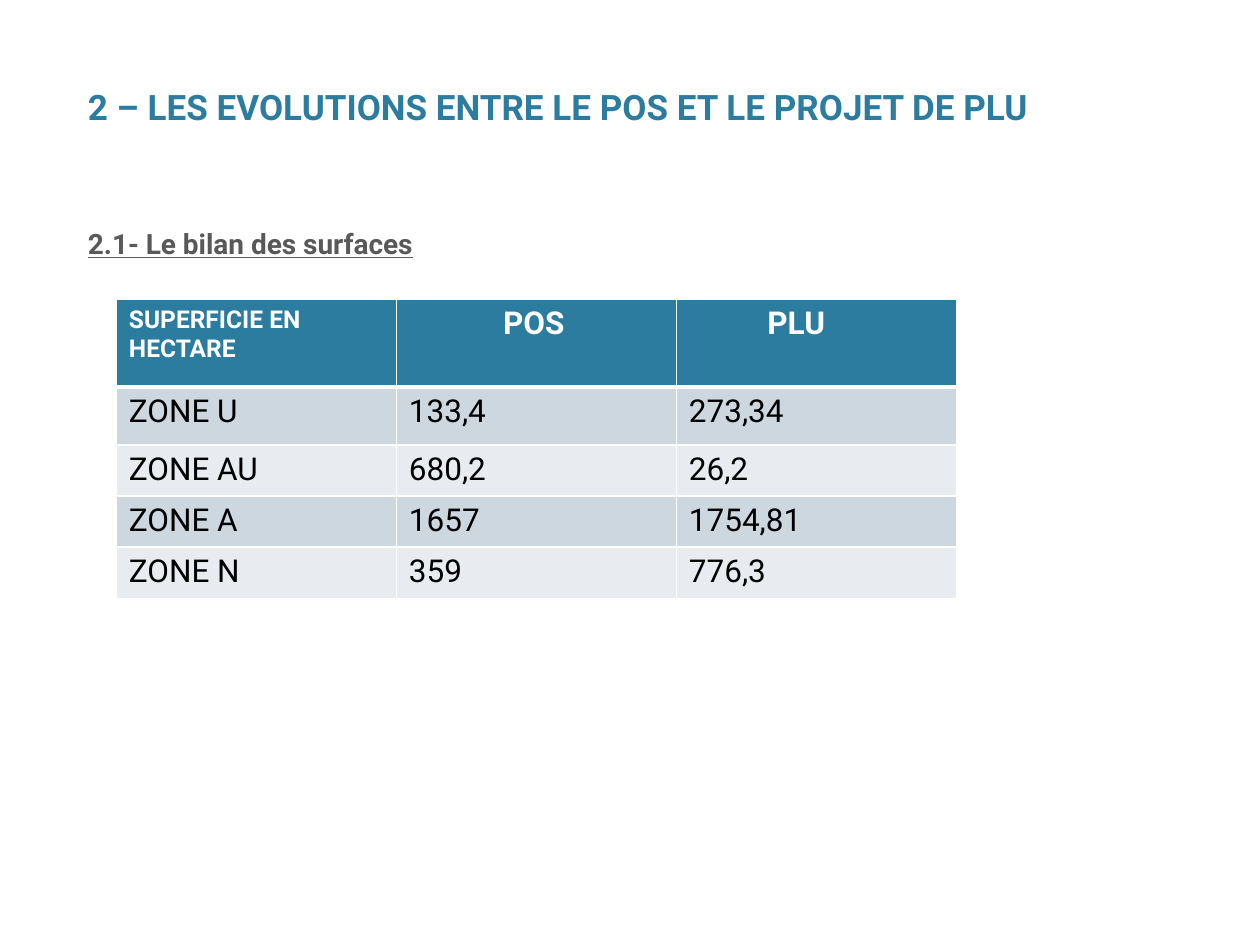
from lxml.etree import SubElement
from pptx import Presentation
from pptx.dml.color import RGBColor
from pptx.enum.text import MSO_ANCHOR
from pptx.oxml.ns import qn
from pptx.util import Pt

HUES = {
    "blue": "2C7C9F",
    "gray": "595959",
    "white": "FFFFFF",
    "black": "000000",
    "dark": "CDD7DF",
    "light": "E8ECF0",
}
ROWS = [
    ("SUPERFICIE EN HECTARE", "POS", "PLU"),
    ("ZONE U", "133,4", "273,34"),
    ("ZONE AU", "680,2", "26,2"),
    ("ZONE A", "1657", "1754,81"),
    ("ZONE N", "359", "776,3"),
]
TALL = (50.4, 33.1, 29.2, 29.2, 29.2)
WIDE = 160
PADS = (7.2, 61, 52)  # left margins of the header cells


def rgb(hue):
    return RGBColor.from_string(HUES[hue])


def write(frame, text, hue, **form):
    """Put one formatted run in a text frame."""
    run = frame.paragraphs[0].add_run()
    run.text = text
    form["size"] = Pt(form["size"])
    for key, val in {"name": "Roboto", **form}.items():
        setattr(run.font, key, val)
    run.font.color.rgb = rgb(hue)


def add_text(slide, box, text, hue, **form):
    frame = slide.shapes.add_textbox(*map(Pt, box)).text_frame
    frame.word_wrap = True
    write(frame, text, hue, **form)
    return frame


def edge(cell, side, width):
    """Draw a white border on one side: L, R, T or B."""
    props = cell._tc.get_or_add_tcPr()
    line = SubElement(props, qn(f"a:ln{side}"), w=str(Pt(width)))
    fill = SubElement(line, qn("a:solidFill"))
    SubElement(fill, qn("a:srgbClr"), val=HUES["white"])


def style(cell, row, col):
    """Set the borders, fill and left margin of a cell."""
    thick = {0: "B", 1: "T"}.get(row)
    for side in "LRTB":
        edge(cell, side, 3 if side == thick else 1)
    cell.fill.solid()
    band = "dark" if row % 2 else "light"
    cell.fill.fore_color.rgb = rgb(band if row else "blue")
    if row == 0:
        cell.margin_left = Pt(PADS[col])


def add_grid(slide, left, top):
    size = (len(ROWS[0]) * WIDE, sum(TALL))
    grid = slide.shapes.add_table(
        len(ROWS), len(ROWS[0]), *map(Pt, (left, top, *size))
    ).table
    for col in grid.columns:
        col.width = Pt(WIDE)
    for row, texts in enumerate(ROWS):
        grid.rows[row].height = Pt(TALL[row])
        for col, text in enumerate(texts):
            cell = grid.cell(row, col)
            style(cell, row, col)
            write(
                cell.text_frame,
                text,
                "black" if row else "white",
                size=14 if row == col == 0 else 18,
                bold=row == 0,
            )


def main():
    deck = Presentation()
    deck.slide_width, deck.slide_height = Pt(720), Pt(540)
    slide = deck.slides.add_slide(deck.slide_layouts[6])
    title = add_text(
        slide,
        (43.2, 8.6, 633.6, 105.1),
        "2 – LES EVOLUTIONS ENTRE LE POS ET LE PROJET DE PLU",
        "blue",
        size=20,
        bold=True,
    )
    title.vertical_anchor = MSO_ANCHOR.BOTTOM
    title.margin_bottom = Pt(41)
    add_text(
        slide,
        (43.2, 126, 633.6, 342),
        "2.1- Le bilan des surfaces",
        "gray",
        size=16,
        bold=True,
        underline=True,
    )
    add_grid(slide, 66.5, 170.8)
    deck.save("out.pptx")


if __name__ == "__main__":
    main()
